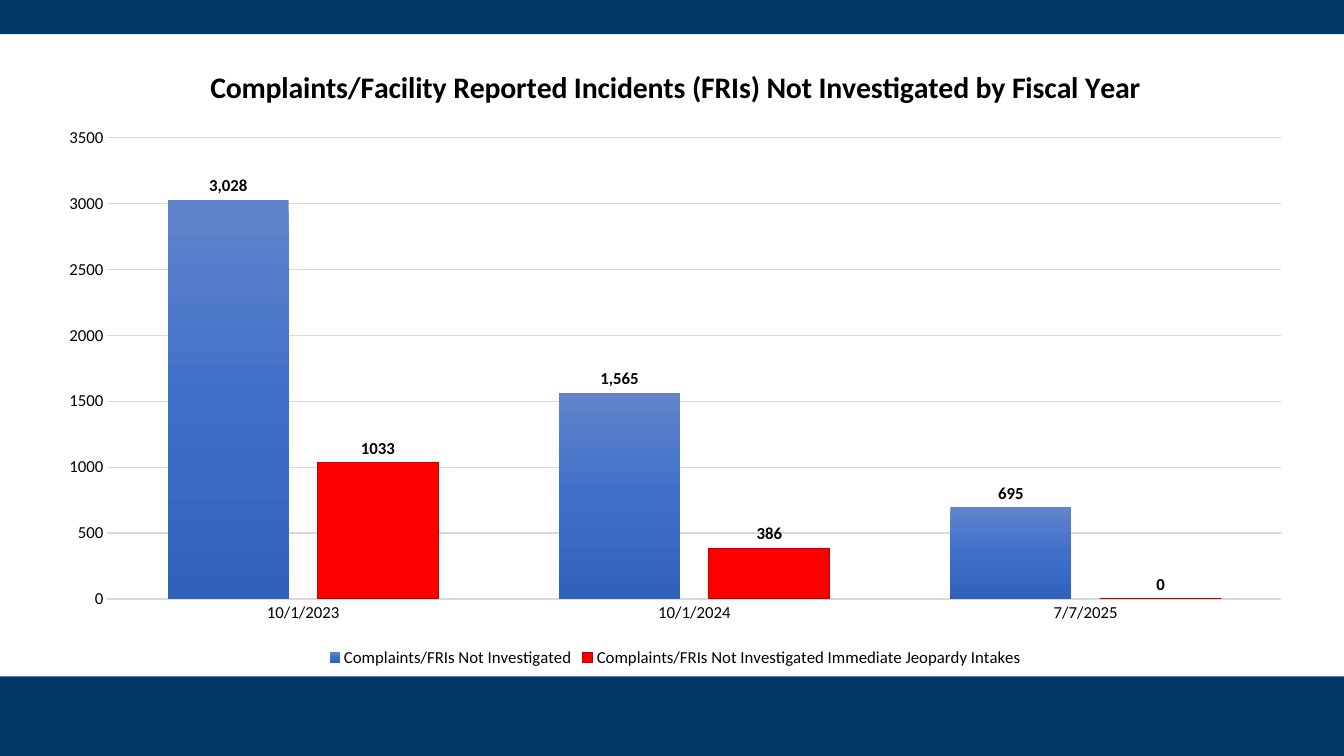
import copy
from dataclasses import dataclass

import pptx
import pptx.chart.data
import pptx.dml.color
import pptx.enum.chart
import pptx.enum.shapes
import pptx.oxml
import pptx.oxml.ns
import pptx.util

Inches = pptx.util.Inches
Pt = pptx.util.Pt
qn = pptx.oxml.ns.qn

SLIDE_WIDTH, SLIDE_HEIGHT = 13.33, 7.5
NAVY, GRID_GRAY, BLACK = "003865", "D9D9D9", "000000"
TITLE = "Complaints/Facility Reported Incidents (FRIs) Not Investigated by Fiscal Year"
DATES = ["10/1/2023", "10/1/2024", "7/7/2025"]


@dataclass
class Band:
    top: float
    height: float


@dataclass
class Measure:
    name: str
    counts: list[int]
    fills: list[str]
    label_format: str
    outline: str | None = None


BANDS = [Band(6.71, 0.79), Band(0, 0.34)]
MEASURES = [
    Measure("Complaints/FRIs Not Investigated", [3028, 1565, 695],
            ["6183CB", "3E70CA", "3062BB"], "#,##0"),
    Measure("Complaints/FRIs Not Investigated Immediate Jeopardy Intakes",
            [1033, 386, 0], ["FF0000"], "General", "C00000"),
]


def rgb(code: str) -> pptx.dml.color.RGBColor:
    return pptx.dml.color.RGBColor.from_string(code)


def style_font(font, size: float, bold: bool = False) -> None:
    font.name = "Calibri"
    font.size = Pt(size)
    font.bold = bold
    font.color.rgb = rgb(BLACK)


def draw_band(slide, band: Band) -> None:
    bar = slide.shapes.add_shape(
        pptx.enum.shapes.MSO_SHAPE.RECTANGLE, 0, Inches(band.top),
        Inches(SLIDE_WIDTH), Inches(band.height))
    bar.shadow.inherit = False
    bar.fill.solid()
    bar.fill.fore_color.rgb = rgb(NAVY)
    bar.line.fill.background()


def fill_downward(series, colors: list[str]) -> None:
    """Fill the columns with an even top-to-bottom gradient of the colors."""
    fill = series.format.fill
    fill.gradient()
    fill.gradient_angle = 270
    stop_list = series._element.find(".//" + qn("a:gsLst"))
    while len(stop_list) < len(colors):
        stop_list.append(copy.deepcopy(stop_list[0]))
    for index, (stop, color) in enumerate(zip(fill.gradient_stops, colors)):
        stop.color.rgb = rgb(color)
        stop.position = index / (len(colors) - 1)


def style_series(series, measure: Measure) -> None:
    series.invert_if_negative = False
    if len(measure.fills) > 1:
        fill_downward(series, measure.fills)
    else:
        series.format.fill.solid()
        series.format.fill.fore_color.rgb = rgb(measure.fills[0])
    if measure.outline:
        series.format.line.color.rgb = rgb(measure.outline)
        series.format.line.width = Pt(0.75)
    else:
        series.format.line.fill.background()
    labels = series.data_labels
    labels.show_value = True
    labels.position = pptx.enum.chart.XL_LABEL_POSITION.OUTSIDE_END
    labels.number_format = measure.label_format
    labels.number_format_is_linked = False
    style_font(labels.font, 12, bold=True)


def place_plot(chart, x: float, y: float, w: float, h: float) -> None:
    """Fix the inner plot area, in fractions of the chart."""
    plot_area = chart._chartSpace.chart.plotArea
    for layout in plot_area.findall(qn("c:layout")):
        plot_area.remove(layout)
    settings = {"layoutTarget": "inner", "xMode": "edge", "yMode": "edge",
                "x": x, "y": y, "w": w, "h": h}
    children = "".join(f'<c:{tag} val="{value}"/>' for tag, value in settings.items())
    plot_area.insert(0, pptx.oxml.parse_xml(
        f'<c:layout {pptx.oxml.ns.nsdecls("c")}>'
        f"<c:manualLayout>{children}</c:manualLayout></c:layout>"))


def style_axes(chart) -> None:
    dates, counts = chart.category_axis, chart.value_axis
    for axis in (dates, counts):
        axis.major_tick_mark = pptx.enum.chart.XL_TICK_MARK.NONE
        axis.minor_tick_mark = pptx.enum.chart.XL_TICK_MARK.NONE
        style_font(axis.tick_labels.font, 12)
    dates.format.line.color.rgb = rgb(GRID_GRAY)
    dates.format.line.width = Pt(1)
    counts.minimum_scale, counts.maximum_scale, counts.major_unit = 0, 3500, 500
    counts.format.line.fill.background()
    counts.major_gridlines.format.line.color.rgb = rgb(GRID_GRAY)
    counts.major_gridlines.format.line.width = Pt(0.75)


def draw_chart(slide) -> None:
    data = pptx.chart.data.CategoryChartData()
    data.categories = DATES
    for measure in MEASURES:
        data.add_series(measure.name, measure.counts)
    chart = slide.shapes.add_chart(
        pptx.enum.chart.XL_CHART_TYPE.COLUMN_CLUSTERED,
        Inches(0.44), Inches(0.43), Inches(12.52), Inches(6.23), data).chart
    style_font(chart.font, 10)

    chart.has_title = True
    heading = chart.chart_title.text_frame.paragraphs[0]
    heading.text = TITLE
    style_font(heading.font, 21.3, bold=True)
    chart.chart_title.include_in_layout = False

    chart.has_legend = True
    chart.legend.position = pptx.enum.chart.XL_LEGEND_POSITION.BOTTOM
    chart.legend.include_in_layout = False
    style_font(chart.legend.font, 12)

    columns = chart.plots[0]
    columns.gap_width = 100
    columns.overlap = -24
    columns.vary_by_categories = False
    for series, measure in zip(columns.series, MEASURES):
        style_series(series, measure)
    style_axes(chart)
    place_plot(chart, 0.05, 0.15, 0.93, 0.735)


def main() -> None:
    deck = pptx.Presentation()
    deck.slide_width = Inches(SLIDE_WIDTH)
    deck.slide_height = Inches(SLIDE_HEIGHT)
    slide = deck.slides.add_slide(deck.slide_layouts[6])
    for band in BANDS:
        draw_band(slide, band)
    draw_chart(slide)
    deck.save("out.pptx")


if __name__ == "__main__":
    main()
